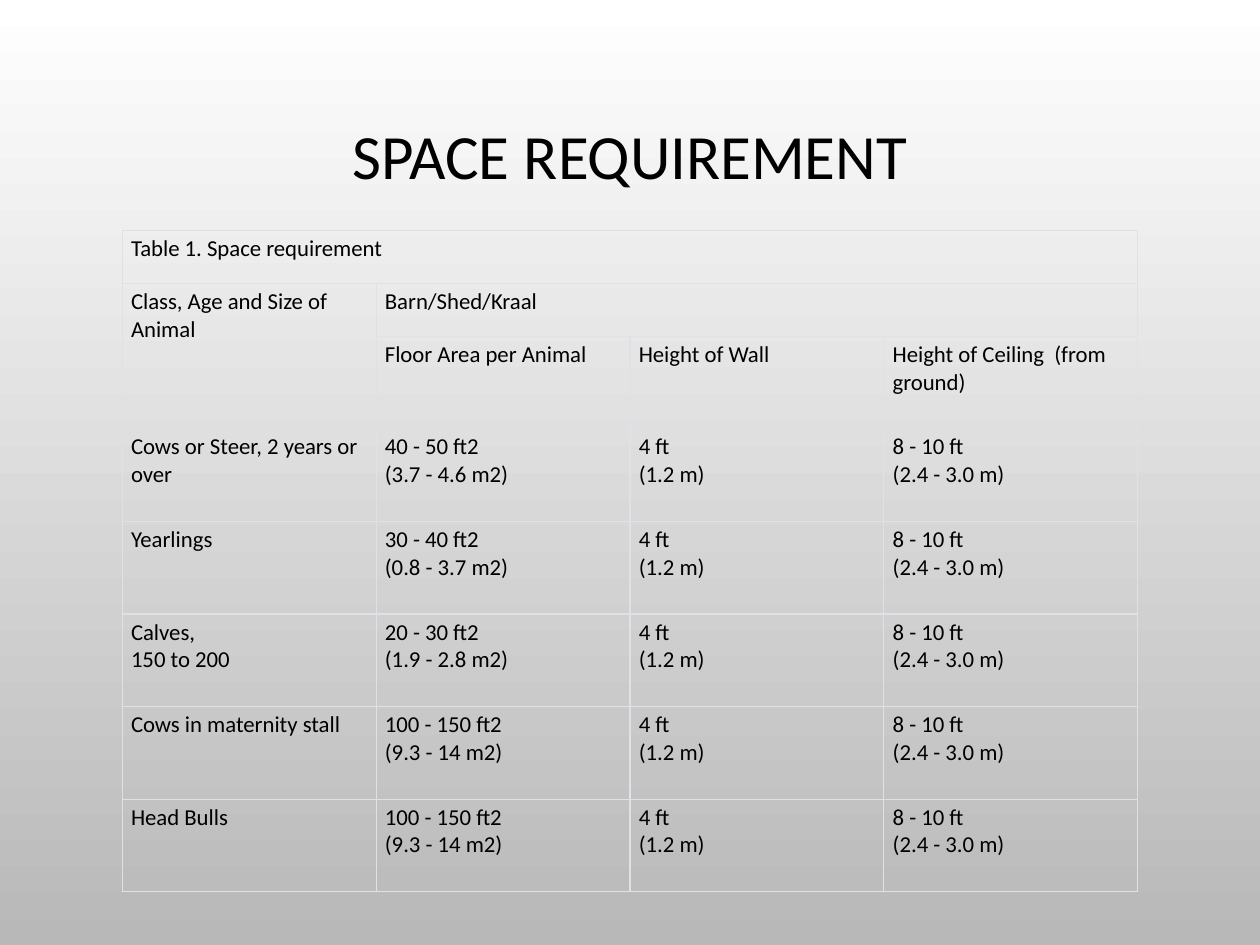
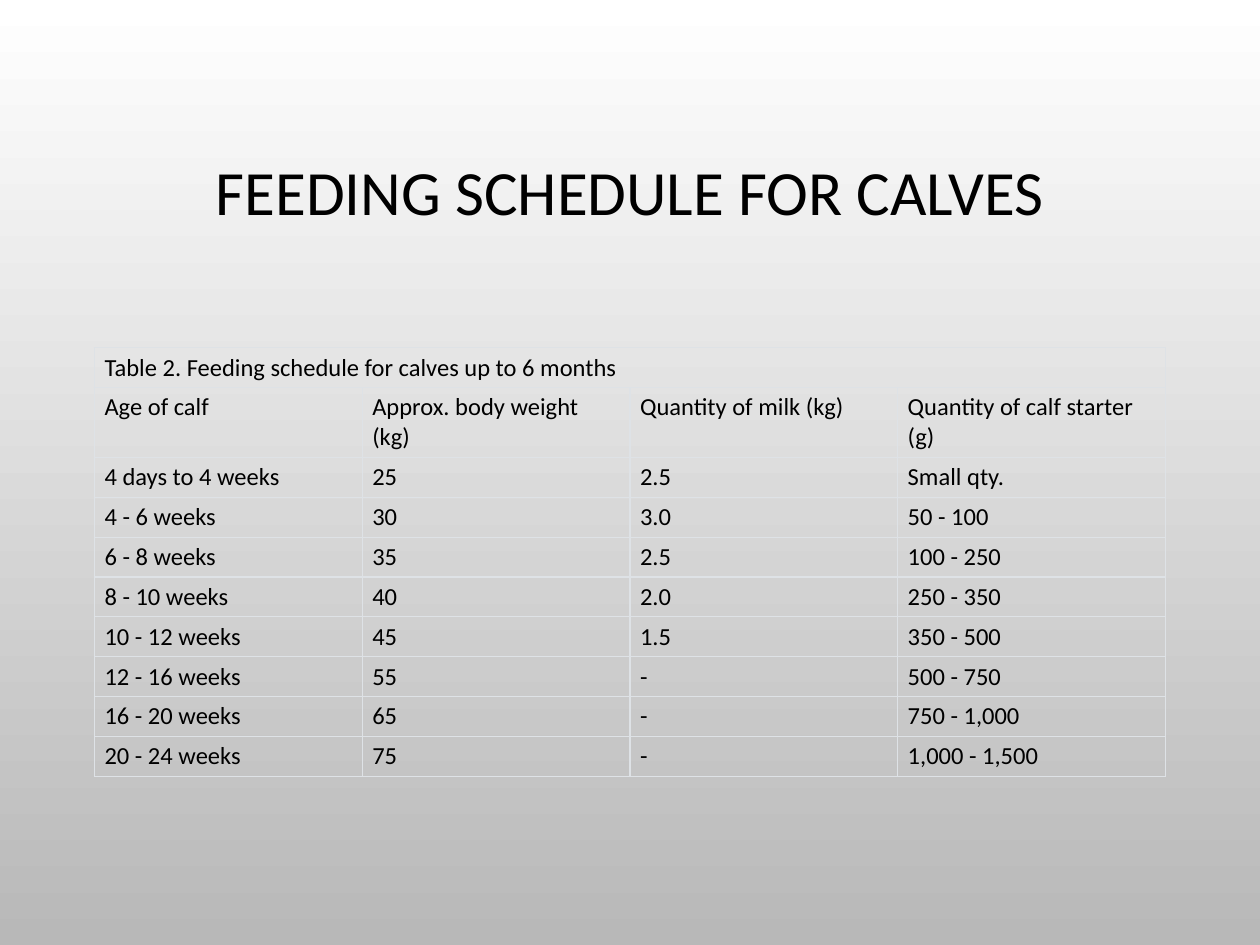
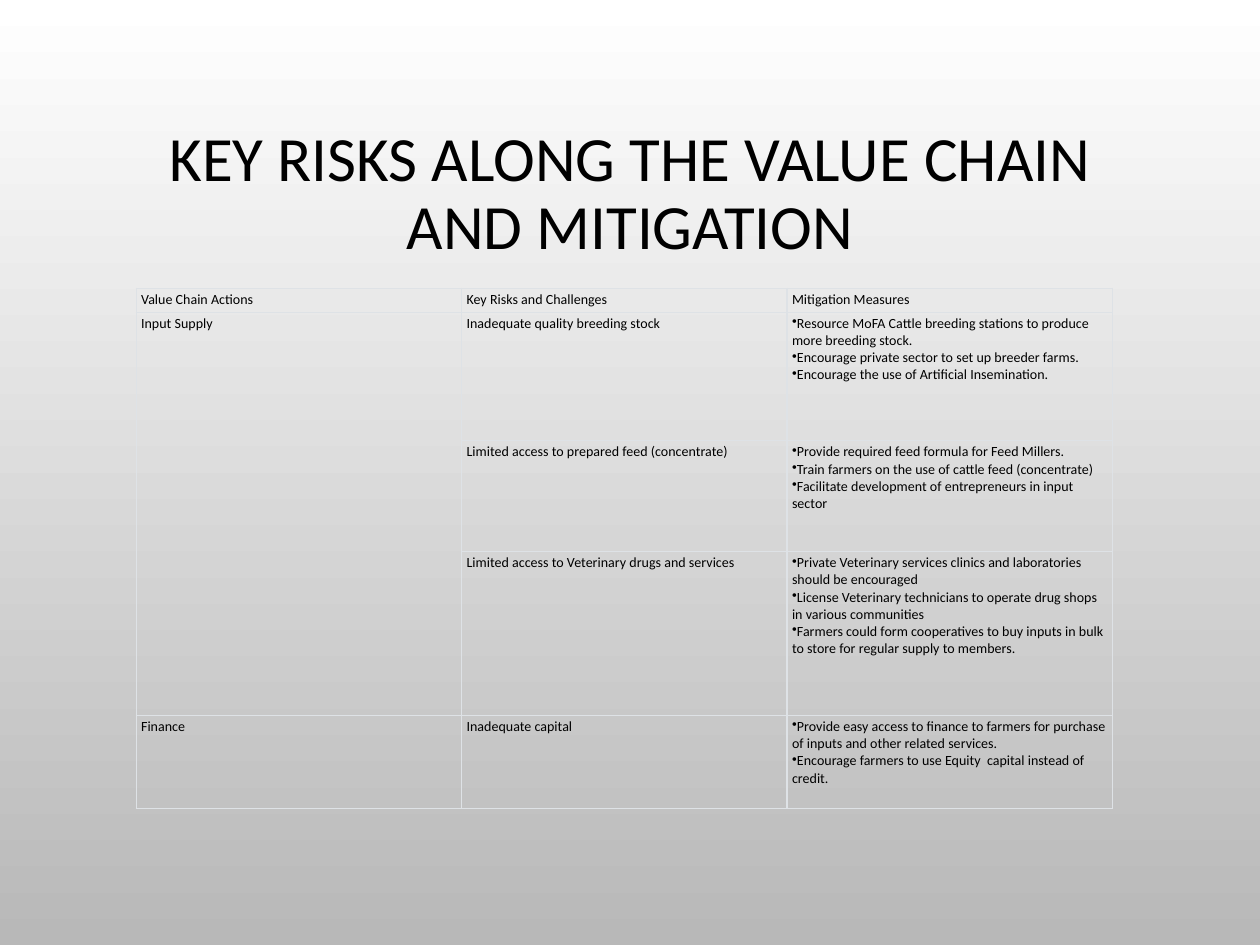
from lxml import etree
from pptx import Presentation
from pptx.dml.color import RGBColor
from pptx.enum.text import MSO_ANCHOR, MSO_AUTO_SIZE, PP_ALIGN
from pptx.oxml.ns import qn
from pptx.util import Inches, Pt

MIDDLE = MSO_ANCHOR.MIDDLE
NO_FIT = MSO_AUTO_SIZE.NONE
CENTER = PP_ALIGN.CENTER
FONT = "Calibri"
TITLE_ONLY = 5
COLORS = {"ink": "000000", "rule": "DEE2E6", "sky": "FFFFFF", "ground": "B8B8B8"}
WIDTH, HEIGHT = Inches(10), Inches(7.5)

WALL = "4 ft\n(1.2 m)"
CEILING = "8 - 10 ft\n(2.4 - 3.0 m)"
FLOOR_AREAS = [
    ("Cows or Steer, 2 years or over", "40 - 50 ft2\n(3.7 - 4.6 m2)"),
    ("Yearlings", "30 - 40 ft2\n(0.8 - 3.7 m2)"),
    ("Calves,\n150 to 200", "20 - 30 ft2\n(1.9 - 2.8 m2)"),
    ("Cows in maternity stall", "100 - 150 ft2\n(9.3 - 14 m2)"),
    ("Head Bulls", "100 - 150 ft2\n(9.3 - 14 m2)"),
]
SPACE_ROWS = [
    ["Table 1. Space requirement", "", "", ""],
    ["Class, Age and Size of Animal", "Barn/Shed/Kraal", "", ""],
    ["", "Floor Area per Animal", "Height of Wall", "Height of Ceiling  (from ground)"],
] + [[animal, area, WALL, CEILING] for animal, area in FLOOR_AREAS]

FEEDING_ROWS = [
    ["Table 2. Feeding schedule for calves up to 6 months", "", "", ""],
    ["Age of calf", "Approx. body weight (kg)", "Quantity of milk (kg)",
     "Quantity of calf starter (g)"],
    ["4 days to 4 weeks", "25", "2.5", "Small qty."],
    ["4 - 6 weeks", "30", "3.0", "50 - 100"],
    ["6 - 8 weeks", "35", "2.5", "100 - 250"],
    ["8 - 10 weeks", "40", "2.0", "250 - 350"],
    ["10 - 12 weeks", "45", "1.5", "350 - 500"],
    ["12 - 16 weeks", "55", "-", "500 - 750"],
    ["16 - 20 weeks", "65", "-", "750 - 1,000"],
    ["20 - 24 weeks", "75", "-", "1,000 - 1,500"],
]

RISK_ROWS = [
    ["Value Chain Actions", "Key Risks and Challenges", "Mitigation Measures"],
    ["Input Supply", "Inadequate quality breeding stock", [
        "Resource MoFA Cattle breeding stations to produce more breeding stock.",
        "Encourage private sector to set up breeder farms.",
        "Encourage the use of Artificial Insemination."]],
    ["", "Limited access to prepared feed (concentrate)", [
        "Provide required feed formula for Feed Millers.",
        "Train farmers on the use of cattle feed (concentrate)",
        "Facilitate development of entrepreneurs in input sector"]],
    ["", "Limited access to Veterinary drugs and services", [
        "Private Veterinary services clinics and laboratories should be encouraged",
        "License Veterinary technicians to operate drug shops in various communities",
        "Farmers could form cooperatives to buy inputs in bulk to store for regular "
        "supply to members."]],
    ["Finance", "Inadequate capital", [
        "Provide easy access to finance to farmers for purchase of inputs and other "
        "related services.",
        "Encourage farmers to use Equity  capital instead of credit."]],
]


def rgb(name):
    """Return the named colour."""
    return RGBColor.from_string(COLORS[name])


def area(left, top, width, height):
    """Turn percentages of the slide into a box in EMU."""
    return (int(WIDTH * left / 100), int(HEIGHT * top / 100),
            int(WIDTH * width / 100), int(HEIGHT * height / 100))


def set_font(paragraph, size):
    """Give a paragraph the deck's typeface and ink."""
    paragraph.font.name = FONT
    paragraph.font.size = Pt(size)
    paragraph.font.color.rgb = rgb("ink")


def paint_background(master):
    """Shade every slide from top to bottom."""
    fill = master.background.fill
    fill.gradient()
    fill.gradient_angle = 270
    for stop, name, position in zip(fill.gradient_stops, ("sky", "ground"), (0, 1)):
        stop.color.rgb = rgb(name)
        stop.position = position


def add_title(slide, wording, box):
    """Place and format the title placeholder."""
    title = slide.shapes.title
    title.left, title.top, title.width, title.height = box
    frame = title.text_frame
    frame.text = wording
    frame.word_wrap = True
    frame.auto_size = NO_FIT
    frame.vertical_anchor = MIDDLE
    heading = frame.paragraphs[0]
    heading.alignment = CENTER
    heading.line_spacing = 0.9
    set_font(heading, 36)


def add_bullet(paragraph):
    """Start a paragraph with a bullet that has no indent."""
    properties = paragraph._p.get_or_add_pPr()
    properties.set("marL", "0")
    properties.set("indent", "0")
    etree.SubElement(properties, qn("a:buChar"), char="•")


def rule_cell(cell):
    """Draw the four thin borders of a cell."""
    properties = cell._tc.get_or_add_tcPr()
    for side in ("a:lnL", "a:lnR", "a:lnT", "a:lnB"):
        border = etree.SubElement(properties, qn(side), w=str(Pt(0.75)))
        paint = etree.SubElement(border, qn("a:solidFill"))
        etree.SubElement(paint, qn("a:srgbClr"), val=COLORS["rule"])


def fill_cell(cell, content, size, inset):
    """Write and format one cell; a list becomes bullets."""
    bulleted = isinstance(content, list)
    cell.margin_left = cell.margin_right = Inches(inset)
    cell.margin_top = cell.margin_bottom = Inches(inset / 2)
    rule_cell(cell)
    cell.fill.background()
    cell.text_frame.text = "\n".join(content) if bulleted else content
    for paragraph in cell.text_frame.paragraphs:
        if bulleted:
            add_bullet(paragraph)
        set_font(paragraph, size)


def add_grid(slide, rows, box, weights, merges, size, inset):
    """Add a table with equal columns and weighted rows."""
    columns = len(rows[0])
    table = slide.shapes.add_table(len(rows), columns, *box).table
    table.first_row = table.horz_banding = False
    for column in table.columns:
        column.width = box[2] // columns
    for row, weight in zip(table.rows, weights):
        row.height = int(box[3] * weight / sum(weights))
    for r, row in enumerate(rows):
        for c, content in enumerate(row):
            fill_cell(table.cell(r, c), content, size, inset)
    for first, last in merges:
        table.cell(*first).merge(table.cell(*last))


def add_table_slide(deck, title, title_height, **grid):
    """Add a slide with a title above one table."""
    slide = deck.slides.add_slide(deck.slide_layouts[TITLE_ONLY])
    add_title(slide, title, area(7.5, 9.07, 85, title_height))
    add_grid(slide, **grid)


def main():
    """Build and save the deck."""
    deck = Presentation()
    deck.slide_width, deck.slide_height = WIDTH, HEIGHT
    paint_background(deck.slide_master)
    add_table_slide(
        deck, "SPACE REQUIREMENT", 15.47, rows=SPACE_ROWS,
        box=area(9.7, 24.4, 80.6, 70), weights=[4] * 2 + [7] * 6,
        merges=[((0, 0), (0, 3)), ((1, 0), (2, 0)), ((1, 1), (1, 3))],
        size=13, inset=0.07)
    add_table_slide(
        deck, "FEEDING SCHEDULE FOR CALVES", 23.2, rows=FEEDING_ROWS,
        box=area(7.5, 36.8, 85, 45.33), weights=[4, 7] + [4] * 8,
        merges=[((0, 0), (0, 3))], size=14, inset=0.08)
    add_table_slide(
        deck, "KEY RISKS ALONG THE VALUE CHAIN AND MITIGATION", 23.2, rows=RISK_ROWS,
        box=area(10.8, 30.53, 77.5, 55.07), weights=[0.19, 1.02, 0.88, 1.3, 0.74],
        merges=[((1, 0), (3, 0))], size=8, inset=0.04)
    deck.save("out.pptx")


if __name__ == "__main__":
    main()
